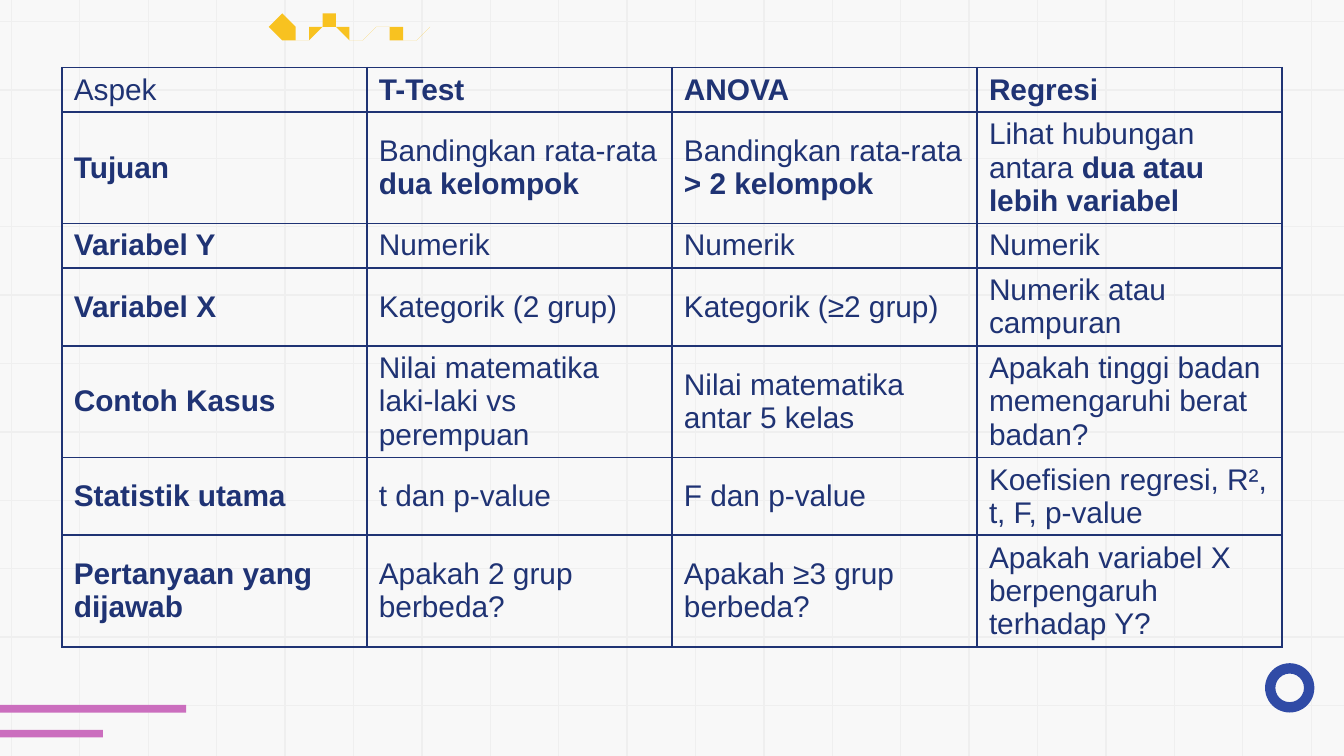
from dataclasses import dataclass

from lxml import etree
from pptx import Presentation
from pptx.dml.color import RGBColor
from pptx.enum.shapes import MSO_CONNECTOR, MSO_SHAPE
from pptx.enum.text import MSO_ANCHOR
from pptx.oxml.ns import qn
from pptx.util import Inches, Pt

STRAIGHT = MSO_CONNECTOR.STRAIGHT
RECT, DONUT = MSO_SHAPE.RECTANGLE, MSO_SHAPE.DONUT
MIDDLE = MSO_ANCHOR.MIDDLE


@dataclass(frozen=True)
class Theme:
    """Colours, font and sizes of the slide."""
    paper: str = "F8F8F8"
    grid: str = "EFEFEF"
    ink: str = "1F3374"
    pink: str = "CB6EBE"
    blue: str = "304BA6"
    gold: str = "F8C220"
    font: str = "Arial"
    size: float = 16
    thin: float = 0.75
    edge: float = 1


def rgb(code):
    """Turn a hex code into a colour."""
    return RGBColor.from_string(code)


def bend(start, part, steps=8):
    """Give the points of a line or cubic curve after its start."""
    if len(part) == 2:
        return [part]
    ends = [start, part[:2], part[2:4], part[4:]]
    points = []
    for step in range(1, steps + 1):
        t = step / steps
        mix = ((1 - t) ** 3, 3 * t * (1 - t) ** 2, 3 * t * t * (1 - t), t ** 3)
        points.append(tuple(sum(m * e[axis] for m, e in zip(mix, ends)) for axis in (0, 1)))
    return points


class Deck:
    """Draw on one slide, in hundredths of the slide's width."""

    def __init__(self, theme, width=10, ratio=9 / 16):
        self.theme = theme
        self.unit = Inches(width) / 100
        self.show = Presentation()
        self.show.slide_width = Inches(width)
        self.show.slide_height = Inches(width * ratio)
        self.slide = self.show.slides.add_slide(self.show.slide_layouts[6])
        self.shapes = self.slide.shapes
        fill = self.slide.background.fill
        fill.solid()
        fill.fore_color.rgb = rgb(theme.paper)

    def span(self, *shares):
        """Turn shares of the width into lengths."""
        return [round(share * self.unit) for share in shares]

    def paint(self, shape, color):
        """Give a shape a plain fill without line or shadow."""
        shape.shadow.inherit = False
        shape.fill.solid()
        shape.fill.fore_color.rgb = rgb(color)
        shape.line.fill.background()
        return shape

    def line(self, *ends):
        """Draw one line of the paper grid."""
        rule = self.shapes.add_connector(STRAIGHT, *self.span(*ends))
        rule.line.color.rgb = rgb(self.theme.grid)
        rule.line.width = Pt(self.theme.thin)
        etree.SubElement(rule._element.spPr, qn("a:effectLst"))

    def shape(self, kind, color, *box):
        """Draw a preset shape."""
        return self.paint(self.shapes.add_shape(kind, *self.span(*box)), color)

    def curve(self, color, start, parts):
        """Draw a closed outline of lines and curves."""
        points = [start]
        for part in parts:
            points += bend(points[-1], part)
        pen = self.shapes.build_freeform(*start, scale=self.unit)
        pen.add_line_segments(points[1:], close=True)
        self.paint(pen.convert_to_shape(), color)

    def border(self, cell):
        """Rule all four sides of a cell."""
        props = cell._tc.get_or_add_tcPr()
        for spot, side in enumerate(("a:lnL", "a:lnR", "a:lnT", "a:lnB")):
            edge = etree.Element(qn(side), w=str(Pt(self.theme.edge)))
            fill = etree.SubElement(edge, qn("a:solidFill"))
            etree.SubElement(fill, qn("a:srgbClr"), val=self.theme.ink)
            props.insert(spot, edge)

    def label(self, cell, text, bold):
        """Fill a cell with text, where stars switch bold on and off."""
        look = {"margin_left": Inches(0.09), "margin_right": Inches(0.09),
                "margin_top": Inches(0.04), "margin_bottom": Inches(0.04),
                "vertical_anchor": MIDDLE}
        for name, value in look.items():
            setattr(cell, name, value)
        cell.fill.background()
        para = cell.text_frame.paragraphs[0]
        for turn, piece in enumerate(text.split("*")):
            if piece:
                run = para.add_run()
                run.text = piece
                style = {"name": self.theme.font, "size": Pt(self.theme.size),
                         "bold": bold or turn % 2 == 1}
                for name, value in style.items():
                    setattr(run.font, name, value)
                run.font.color.rgb = rgb(self.theme.ink)

    def table(self, left, top, width, rows, highs):
        """Draw a ruled table with bold heads."""
        count = len(rows[0])
        box = self.span(left, top, width * count, sum(highs))
        table = self.shapes.add_table(len(rows), count, *box).table
        table.first_row = table.horz_banding = False
        for col in table.columns:
            col.width = self.span(width)[0]
        for r, (row, high) in enumerate(zip(rows, highs)):
            table.rows[r].height = self.span(high)[0]
            for c, text in enumerate(row):
                cell = table.cell(r, c)
                self.label(cell, text, (r == 0) != (c == 0))
                self.border(cell)


ROWS = [
    ("Aspek", "T-Test", "ANOVA", "Regresi"),
    ("Tujuan", "Bandingkan rata-rata *dua kelompok*", "Bandingkan rata-rata *> 2 kelompok*",
     "Lihat hubungan antara *dua atau lebih variabel*"),
    ("Variabel Y", "Numerik", "Numerik", "Numerik"),
    ("Variabel X", "Kategorik (2 grup)", "Kategorik (≥2 grup)", "Numerik atau campuran"),
    ("Contoh Kasus", "Nilai matematika laki-laki vs perempuan",
     "Nilai matematika antar 5 kelas", "Apakah tinggi badan memengaruhi berat badan?"),
    ("Statistik utama", "t dan p-value", "F dan p-value", "Koefisien regresi, R², t, F, p-value"),
    ("Pertanyaan yang dijawab", "Apakah 2 grup berbeda?", "Apakah ≥3 grup berbeda?",
     "Apakah variabel X berpengaruh terhadap Y?"),
]
HIGHS = [3.3, 8.3, 3.3, 5.8, 8.3, 5.8, 8.3]
WAVE = [
    (20.4, 1.5), (21.3, 2.6), (21.5, 2.9, 21.8, 3, 22.2, 3), (22.4, 3, 22.7, 2.9, 22.9, 2.7),
    (23.8, 1.9), (23.9, 1.8, 24.1, 1.8, 24.3, 1.8), (24.6, 1.8, 24.8, 1.8, 24.9, 2),
    (25.5, 2.7), (25.7, 3, 26, 3.1, 26.3, 3.2), (26.6, 3.2, 26.9, 3.1, 27.1, 2.8),
    (27.9, 2.2), (28.1, 2, 28.3, 1.9, 28.5, 1.9), (28.7, 2, 28.9, 2.1, 29.1, 2.3),
    (29.4, 2.7), (29.6, 3, 29.9, 3.2, 30.3, 3.2), (30.6, 3.2, 30.9, 3.1, 31.2, 2.8),
    (32.1, 1.8), (31.8, 1.6), (30.9, 2.6), (30.7, 2.8, 30.5, 2.8, 30.3, 2.8),
    (30, 2.8, 29.9, 2.7, 29.7, 2.5), (29.3, 2), (29.1, 1.8, 28.8, 1.7, 28.5, 1.6),
    (28.2, 1.6, 27.9, 1.7, 27.7, 1.9), (26.9, 2.6), (26.8, 2.7, 26.6, 2.8, 26.3, 2.8),
    (26.1, 2.8, 25.9, 2.7, 25.8, 2.5), (25.1, 1.8), (24.9, 1.6, 24.7, 1.4, 24.2, 1.4),
    (24, 1.4, 23.7, 1.5, 23.5, 1.7), (22.6, 2.5), (22.5, 2.6, 22.3, 2.6, 22.2, 2.6),
    (21.9, 2.6, 21.7, 2.5, 21.6, 2.4),
]


def main():
    """Build and save the slide."""
    theme = Theme()
    deck = Deck(theme)
    step = 5.09
    for row in range(11):
        deck.line(100, 1.6 + row * step, 0, 1.6 + row * step)
    for col in range(20):
        deck.line(0.85 + col * step, -1.8, 0.85 + col * step, 58)
    for top, width in ((52.45, 13.85), (54.3, 7.65)):
        deck.shape(RECT, theme.pink, 0, top, width, 0.57)
    ring = deck.shape(DONUT, theme.blue, 94.13, 49.35, 3.67, 3.67)
    ring.adjustments[0] = 0.21
    deck.curve(theme.gold, (20.6, 1.3), WAVE)
    deck.table(4.6, 5.03, 22.7, ROWS, HIGHS)
    deck.show.save("out.pptx")


if __name__ == "__main__":
    main()
